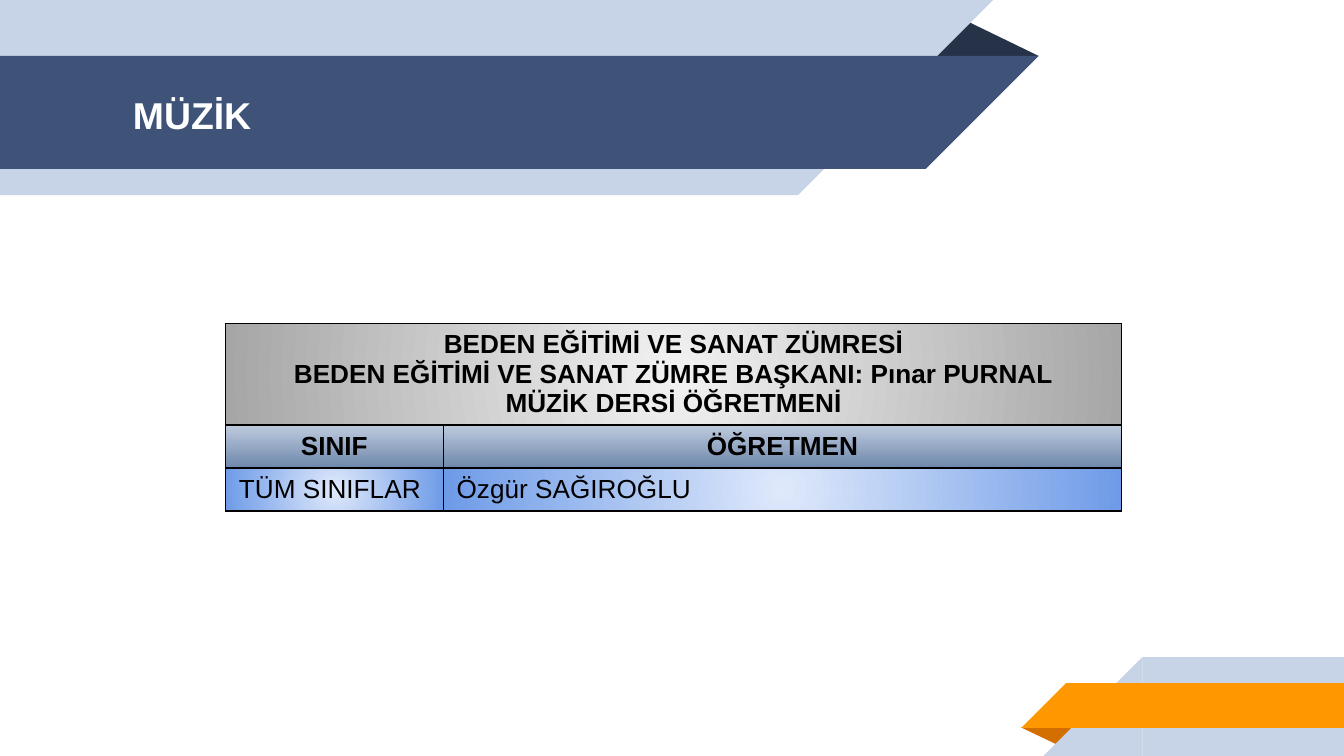
from dataclasses import dataclass

from lxml.etree import SubElement
from pptx import Presentation
from pptx.dml.color import RGBColor
from pptx.enum.shapes import MSO_SHAPE as Shape
from pptx.enum.text import MSO_ANCHOR as Anchor, MSO_AUTO_SIZE as AutoSize, PP_ALIGN as Align
from pptx.oxml import parse_xml
from pptx.oxml.ns import nsdecls, qn
from pptx.util import Pt


@dataclass(frozen=True)
class Theme:
    """Colours, font and type sizes of the slide."""
    font: str = "Arial"
    title_size: float = 20
    table_size: float = 14
    pale: str = "C7D3E6"
    navy: str = "3F5378"
    navy_fold: str = "263248"
    orange: str = "FF9800"
    orange_fold: str = "D26F00"
    white: str = "FFFFFF"
    ink: str = "000000"
    heading: tuple = ("F2F2F2", "A6A6A6")
    labels: tuple = ("BECBDE", "6E87AB")
    body: tuple = ("DFE9FB", "6E9BE7")


class SlideBuilder:
    """Draws styled elements on the current slide."""

    def __init__(self, slide, theme):
        self.slide = slide
        self.theme = theme

    def block(self, kind, left, top, width, height, color, rotation=0):
        """Add a flat preset shape without outline."""
        block = self.slide.shapes.add_shape(kind, Pt(left), Pt(top), Pt(width), Pt(height))
        block.shadow.inherit = False
        block.fill.solid()
        block.fill.fore_color.rgb = RGBColor.from_string(color)
        block.line.fill.background()
        block.rotation = rotation
        return block

    def ribbon(self, left, top, width, height, color, points_right):
        """Add a bar that ends in a 45 degree cut on one side."""
        self.block(Shape.RECTANGLE, left, top, width, height, color)
        tip = left + width if points_right else left - height
        rotation = 90 if points_right else 270
        self.block(Shape.RIGHT_TRIANGLE, tip, top, height, height, color, rotation)

    def fold(self, left, top, width, height, color, rotation=0):
        """Add the shaded triangle behind a ribbon."""
        fold = self.block(Shape.ISOSCELES_TRIANGLE, left, top, width, height, color, rotation)
        fold.adjustments[0] = 0.324

    def text(self, paragraph, words, size, color, bold, align):
        """Write one styled run into a paragraph."""
        paragraph.alignment = align
        run = paragraph.add_run()
        run.text = words
        run.font.name = self.theme.font
        run.font.size = Pt(size)
        run.font.bold = bold
        run.font.color.rgb = RGBColor.from_string(color)

    def title(self, words, left, top, width, height):
        """Place the title placeholder in front of the ribbons."""
        title = self.slide.shapes.title
        title.left, title.top, title.width, title.height = map(Pt, (left, top, width, height))
        frame = title.text_frame
        frame.auto_size = AutoSize.NONE
        frame.word_wrap = True
        frame.vertical_anchor = Anchor.MIDDLE
        frame.margin_left = frame.margin_right = frame.margin_top = frame.margin_bottom = Pt(7.2)
        self.text(frame.paragraphs[0], words, self.theme.title_size, self.theme.white, True, Align.LEFT)
        title.element.getparent().append(title.element)

    def table(self, left, top, widths, heights):
        """Add a bordered table and return it."""
        table = self.slide.shapes.add_table(
            len(heights), len(widths), Pt(left), Pt(top), Pt(sum(widths)), Pt(sum(heights))).table
        for column, width in zip(table.columns, widths):
            column.width = Pt(width)
        for row, height in zip(table.rows, heights):
            row.height = Pt(height)
        for cell in table.iter_cells():
            self.borders(cell)
        return table

    def borders(self, cell):
        """Draw a thin line on every side of a cell."""
        properties = cell._tc.get_or_add_tcPr()
        for position, side in enumerate(("lnL", "lnR", "lnT", "lnB")):
            properties.insert(position, parse_xml(
                f'<a:{side} {nsdecls("a")} w="9525"><a:solidFill>'
                f'<a:srgbClr val="{self.theme.ink}"/></a:solidFill></a:{side}>'))

    def gradient(self, cell, colors, radial):
        """Fill a cell with a downward or a radial gradient."""
        cell.fill.gradient()
        cell.fill.gradient_angle = 270
        for stop, color, position in zip(cell.fill.gradient_stops, colors, (0, 1)):
            stop.color.rgb = RGBColor.from_string(color)
            stop.position = position
        if radial:
            gradient = cell._tc.tcPr.find(qn("a:gradFill"))
            gradient.remove(gradient.find(qn("a:lin")))
            circle = SubElement(gradient, qn("a:path"), {"path": "circle"})
            SubElement(circle, qn("a:fillToRect"), dict.fromkeys("ltrb", "50000"))

    def cell(self, cell, lines, colors, radial=True, bold=True, align=Align.CENTER, anchor=Anchor.TOP):
        """Fill a cell and write its lines."""
        self.gradient(cell, colors, radial)
        cell.vertical_anchor = anchor
        frame = cell.text_frame
        for index, line in enumerate(lines):
            paragraph = frame.add_paragraph() if index else frame.paragraphs[0]
            self.text(paragraph, line, self.theme.table_size, self.theme.ink, bold, align)


def main():
    """Build the music teachers slide."""
    deck = Presentation()
    deck.slide_width, deck.slide_height = Pt(720), Pt(405)
    theme = Theme()
    builder = SlideBuilder(deck.slides.add_slide(deck.slide_layouts[5]), theme)

    builder.fold(495.5, 10, 61, 20, theme.navy_fold)
    builder.ribbon(0, 0, 427.5, 104.5, theme.pale, True)
    builder.ribbon(0, 30, 496, 60.5, theme.navy, True)
    builder.fold(547, 389.7, 31, 10, theme.orange_fold, 180)
    builder.ribbon(612, 352, 108, 53, theme.pale, False)
    builder.ribbon(571, 366, 149, 24, theme.orange, False)
    builder.title("MÜZİK", 64, 31, 414, 60.5)

    teachers = builder.table(120.8, 173.3, (116.6, 140.4, 103, 120.2), (54, 23, 23))
    teachers.cell(0, 0).merge(teachers.cell(0, 3))
    for row in (1, 2):
        teachers.cell(row, 1).merge(teachers.cell(row, 3))
    builder.cell(teachers.cell(0, 0), (
        "BEDEN EĞİTİMİ VE SANAT ZÜMRESİ",
        "BEDEN EĞİTİMİ VE SANAT ZÜMRE BAŞKANI: Pınar PURNAL",
        "MÜZİK DERSİ ÖĞRETMENİ"), theme.heading)
    for column, (label, value) in enumerate((("SINIF", "TÜM SINIFLAR"), ("ÖĞRETMEN", "Özgür SAĞIROĞLU"))):
        builder.cell(teachers.cell(1, column), (label,), theme.labels, radial=False)
        builder.cell(teachers.cell(2, column), (value,), theme.body,
                     bold=False, align=Align.LEFT, anchor=Anchor.MIDDLE)

    deck.save("out.pptx")


if __name__ == "__main__":
    main()
